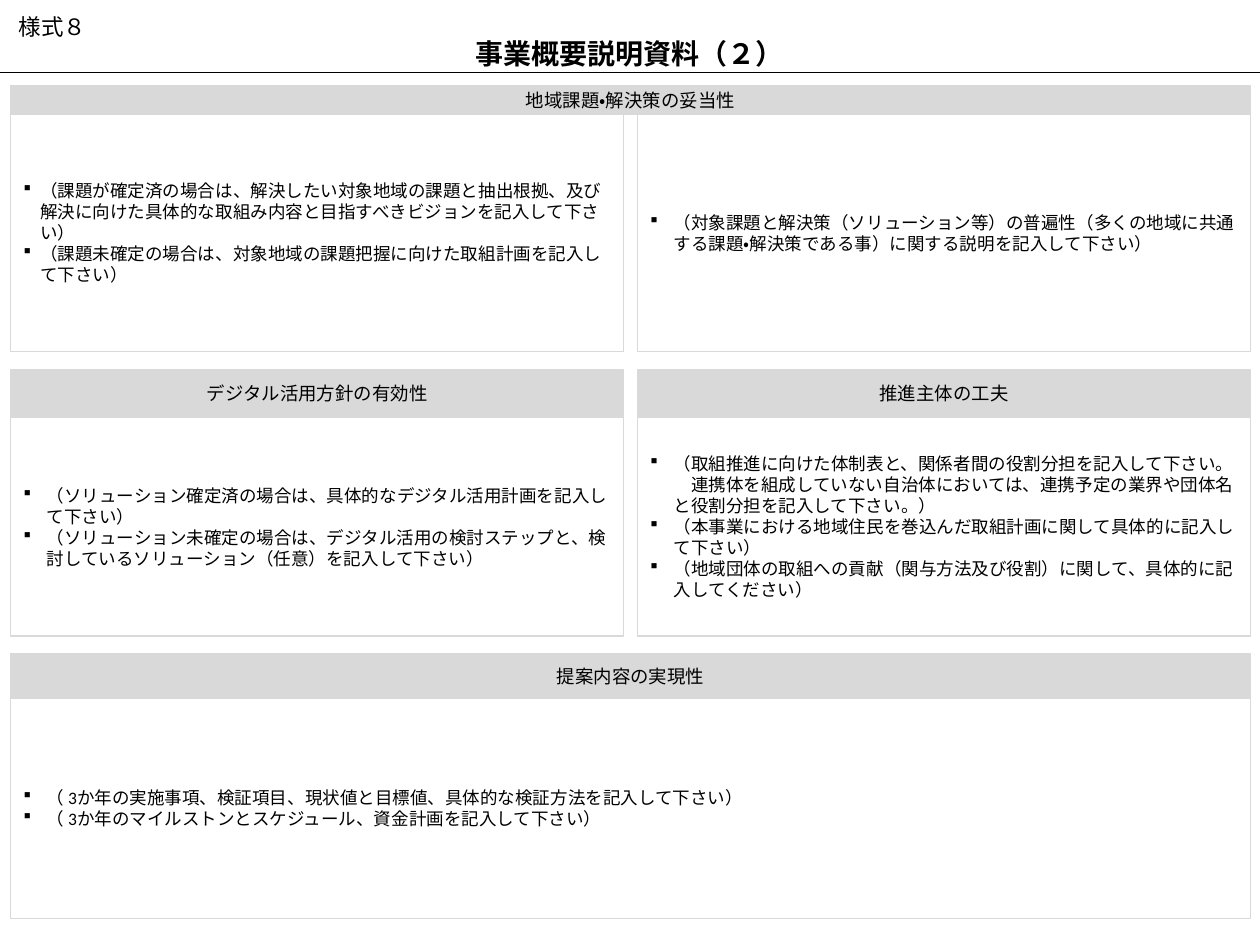
"""Build the second project outline form as a one-slide presentation."""
from dataclasses import dataclass

from lxml import etree
from pptx import Presentation
from pptx.dml.color import RGBColor
from pptx.enum.lang import MSO_LANGUAGE_ID
from pptx.enum.shapes import MSO_CONNECTOR, MSO_SHAPE
from pptx.enum.text import MSO_ANCHOR, MSO_AUTO_SIZE, PP_ALIGN
from pptx.oxml.ns import qn
from pptx.util import Pt

RECTANGLE = MSO_SHAPE.RECTANGLE
STRAIGHT = MSO_CONNECTOR.STRAIGHT
TOP, MIDDLE = MSO_ANCHOR.TOP, MSO_ANCHOR.MIDDLE
LEFT, CENTER = PP_ALIGN.LEFT, PP_ALIGN.CENTER
FIT_SHAPE = MSO_AUTO_SIZE.SHAPE_TO_FIT_TEXT
JAPANESE = MSO_LANGUAGE_ID.JAPANESE


@dataclass(frozen=True)
class Theme:
    font: str = "Calibri"
    ink: RGBColor = RGBColor(0, 0, 0)
    paper: RGBColor = RGBColor(255, 255, 255)
    band: RGBColor = RGBColor(0xD9, 0xD9, 0xD9)
    title_size: float = 22.4
    label_size: float = 18
    heading_size: float = 14.7
    body_size: float = 14
    rule_width: float = 1


THEME = Theme()
SLIDE_WIDTH, SLIDE_HEIGHT = 1008, 756
MARGIN, FULL_WIDTH, GUTTER = 8.7, 991.5, 11.5
COLUMN_WIDTH = (FULL_WIDTH - GUTTER) / 2
RIGHT = MARGIN + COLUMN_WIDTH + GUTTER
WIDE_INDENT, NARROW_INDENT = 18.75, 13.5
PANEL_INSETS = {"margin_left": 10, "margin_right": 10, "margin_top": 5, "margin_bottom": 5}
TITLE_INSETS = {"margin_top": 27.5, "margin_bottom": 0}

# left, width, top, height
HEADINGS = [
    (MARGIN, FULL_WIDTH, 68.5, 22.75, "地域課題・解決策の妥当性"),
    (MARGIN, COLUMN_WIDTH, 296, 37.75, "デジタル活用方針の有効性"),
    (RIGHT, COLUMN_WIDTH, 296, 37.75, "推進主体の工夫"),
    (MARGIN, FULL_WIDTH, 522.75, 36, "提案内容の実現性"),
]
BODIES = [
    (MARGIN, COLUMN_WIDTH, 91.25, 190, NARROW_INDENT, [
        "（課題が確定済の場合は、解決したい対象地域の課題と抽出根拠、及び解決に向けた具体的な取組み内容と目指すべきビジョンを記入して下さい）",
        "（課題未確定の場合は、対象地域の課題把握に向けた取組計画を記入して下さい）",
    ]),
    (RIGHT, COLUMN_WIDTH, 91.25, 190, WIDE_INDENT, [
        "（対象課題と解決策（ソリューション等）の普遍性（多くの地域に共通する課題・解決策である事）に関する説明を記入して下さい）",
    ]),
    (MARGIN, COLUMN_WIDTH, 333.75, 175, WIDE_INDENT, [
        "（ソリューション確定済の場合は、具体的なデジタル活用計画を記入して下さい）",
        "（ソリューション未確定の場合は、デジタル活用の検討ステップと、検討しているソリューション（任意）を記入して下さい）",
    ]),
    (RIGHT, COLUMN_WIDTH, 333.75, 175, WIDE_INDENT, [
        "（取組推進に向けた体制表と、関係者間の役割分担を記入して下さい。\n"
        "　連携体を組成していない自治体においては、連携予定の業界や団体名と役割分担を記入して下さい。）",
        "（本事業における地域住民を巻込んだ取組計画に関して具体的に記入して下さい）",
        "（地域団体の取組への貢献（関与方法及び役割）に関して、具体的に記入してください）",
    ]),
    (MARGIN, FULL_WIDTH, 558, 177, WIDE_INDENT, [
        "（ 3か年の実施事項、検証項目、現状値と目標値、具体的な検証方法を記入して下さい）",
        "（ 3か年のマイルストンとスケジュール、資金計画を記入して下さい）",
    ]),
]


def write(frame, lines, size, align=LEFT, anchor=TOP, insets=None, bold=False):
    """Fill a text frame with evenly formatted paragraphs."""
    frame.word_wrap = True
    frame.vertical_anchor = anchor
    for side, inset in (insets or {}).items():
        setattr(frame, side, Pt(inset))
    face = {"name": THEME.font, "size": Pt(size), "bold": bold, "language_id": JAPANESE}
    for number, line in enumerate(lines):
        paragraph = frame.add_paragraph() if number else frame.paragraphs[0]
        paragraph.text = line
        paragraph.alignment = align
        for run in paragraph.runs:
            for attribute, value in face.items():
                setattr(run.font, attribute, value)
            run.font.color.rgb = THEME.ink
        for line_break in paragraph._p.findall(qn("a:br")):
            etree.SubElement(line_break, qn("a:rPr"), sz=str(int(size * 100)))


def add_bullets(frame, indent):
    """Give every paragraph a small square with a hanging indent."""
    for paragraph in frame.paragraphs:
        properties = paragraph._p.get_or_add_pPr()
        properties.set("marL", str(int(Pt(indent))))
        properties.set("indent", str(-int(Pt(indent))))
        etree.SubElement(properties, qn("a:buFont"), typeface="Wingdings")
        etree.SubElement(properties, qn("a:buChar"), char="§")


def add_panel(slide, left, top, width, height, fill, border=None):
    """Add a flat rectangle and return its text frame."""
    panel = slide.shapes.add_shape(RECTANGLE, Pt(left), Pt(top), Pt(width), Pt(height))
    panel.shadow.inherit = False
    panel.fill.solid()
    panel.fill.fore_color.rgb = fill
    if border is None:
        panel.line.fill.background()
    else:
        panel.line.color.rgb = border
        panel.line.width = Pt(THEME.rule_width)
    return panel.text_frame


def add_heading(slide, left, width, top, height, heading):
    """Add a grey section band with a centred heading."""
    frame = add_panel(slide, left, top, width, height, THEME.band, THEME.band)
    write(frame, [heading], THEME.heading_size, CENTER, MIDDLE, PANEL_INSETS)


def add_body(slide, left, width, top, height, indent, prompts):
    """Add a bordered section body with bulleted prompts."""
    frame = add_panel(slide, left, top, width, height, THEME.paper, THEME.band)
    write(frame, prompts, THEME.body_size, LEFT, MIDDLE, PANEL_INSETS)
    add_bullets(frame, indent)


def add_title(slide, title):
    """Add the centred slide title and the rule beneath it."""
    frame = add_panel(slide, 0, 2, SLIDE_WIDTH, 31.75, THEME.paper)
    write(frame, [title], THEME.title_size, CENTER, TOP, TITLE_INSETS, bold=True)
    rule = slide.shapes.add_connector(STRAIGHT, 0, Pt(58), Pt(SLIDE_WIDTH), Pt(58))
    rule.line.color.rgb = THEME.ink
    rule.line.width = Pt(THEME.rule_width)
    etree.SubElement(rule._element.spPr, qn("a:effectLst"))


def add_form_label(slide, label):
    """Add the form number in the top left corner."""
    form_label = slide.shapes.add_textbox(Pt(8), Pt(6.5), Pt(83.5), Pt(29))
    write(form_label.text_frame, [label], THEME.label_size)
    form_label.text_frame.auto_size = FIT_SHAPE


def main():
    """Build and save the slide."""
    presentation = Presentation()
    presentation.slide_width, presentation.slide_height = Pt(SLIDE_WIDTH), Pt(SLIDE_HEIGHT)
    slide = presentation.slides.add_slide(presentation.slide_layouts[6])
    for body in BODIES:
        add_body(slide, *body)
    for heading in HEADINGS:
        add_heading(slide, *heading)
    add_title(slide, "事業概要説明資料（２）")
    add_form_label(slide, "様式８")
    presentation.save("out.pptx")


if __name__ == "__main__":
    main()
